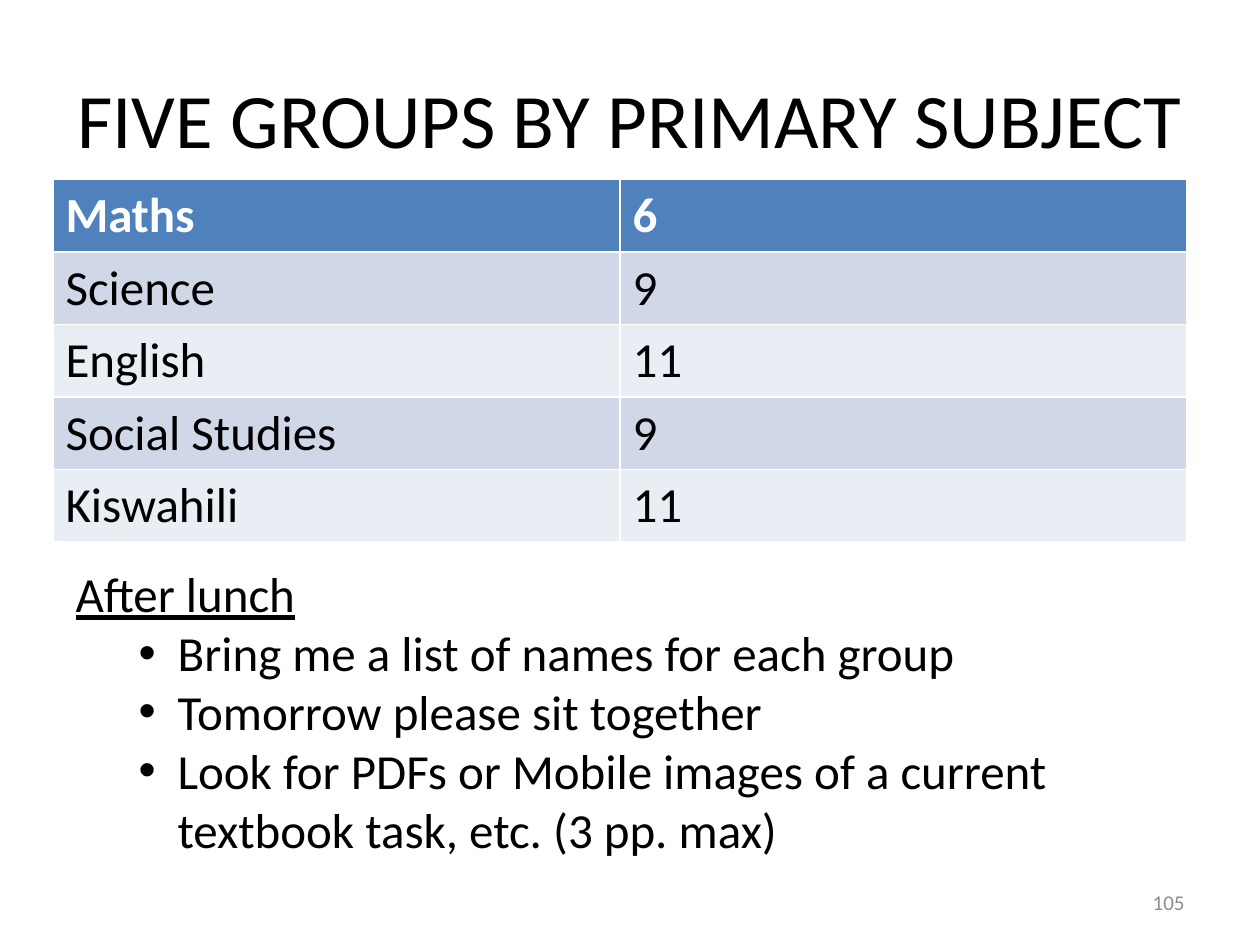
from lxml import etree
from pptx import Presentation
from pptx.dml.color import RGBColor
from pptx.enum import text
from pptx.oxml.ns import qn
from pptx.util import Inches, Pt

WIDTH, HEIGHT = Inches(10), Inches(7.5)


def colour(value):
    return RGBColor.from_string(value)


class SlideBuilder:
    font_name = "Calibri"
    black, white, grey = "000000", "FFFFFF", "8C8C8C"
    header, bands = "4F81BD", ("D0D8E8", "E9EDF4")

    def __init__(self, presentation):
        self.slide = presentation.slides.add_slide(presentation.slide_layouts[1])

    def box(self, left, top, width, height):
        """Turn shares of the slide's size into lengths."""
        return (int(left * WIDTH), int(top * HEIGHT),
                int(width * WIDTH), int(height * HEIGHT))

    def place(self, shape, *shares):
        shape.left, shape.top, shape.width, shape.height = self.box(*shares)

    def style(self, paragraph, size, value, bold=False, underline=False):
        font = paragraph.font
        font.name, font.size = self.font_name, Pt(size)
        font.bold, font.underline = bold, underline
        font.color.rgb = colour(value)

    def title(self, wording, *shares):
        shape = self.slide.shapes.title
        self.place(shape, *shares)
        shape.text_frame.text = wording
        paragraph = shape.text_frame.paragraphs[0]
        paragraph.alignment = text.PP_ALIGN.CENTER
        self.style(paragraph, 44, self.black)

    def table(self, rows, *shares):
        left, top, width, height = self.box(*shares)
        table = self.slide.shapes.add_table(
            len(rows), len(rows[0]), left, top, width, height).table
        for r, row in enumerate(rows):
            for c, wording in enumerate(row):
                cell = table.cell(r, c)
                cell.text = wording
                cell.fill.solid()
                cell.fill.fore_color.rgb = colour(
                    self.bands[(r - 1) % 2] if r else self.header)
                self.style(cell.text_frame.paragraphs[0], 28,
                           self.black if r else self.white, bold=r == 0)

    def bullet(self, paragraph, character):
        properties = paragraph._p.get_or_add_pPr()
        if not character:
            properties.set("marL", "0")
            properties.set("indent", "0")
            etree.SubElement(properties, qn("a:buNone"))
            return
        properties.set("marL", str(Inches(0.81)))
        properties.set("indent", str(Inches(-0.31)))
        etree.SubElement(properties, qn("a:buFont")).set("typeface", "Arial")
        etree.SubElement(properties, qn("a:buChar")).set("char", character)

    def body(self, heading, items, *shares):
        shape = self.slide.placeholders[1]
        self.place(shape, *shares)
        frame = shape.text_frame
        frame.auto_size = text.MSO_AUTO_SIZE.NONE
        frame.word_wrap = False
        for i, wording in enumerate([heading] + items):
            paragraph = frame.add_paragraph() if i else frame.paragraphs[0]
            paragraph.text = wording
            paragraph.level = 1 if i else 0
            paragraph.space_before = Pt(0)
            self.bullet(paragraph, "•" if i else None)
            self.style(paragraph, 28, self.black, underline=i == 0)

    def page_number(self, wording, *shares):
        frame = self.slide.shapes.add_textbox(*self.box(*shares)).text_frame
        frame.word_wrap = True
        frame.vertical_anchor = text.MSO_ANCHOR.MIDDLE
        frame.text = wording
        frame.paragraphs[0].alignment = text.PP_ALIGN.RIGHT
        self.style(frame.paragraphs[0], 12, self.grey)


def main():
    presentation = Presentation()
    presentation.slide_width, presentation.slide_height = WIDTH, HEIGHT
    builder = SlideBuilder(presentation)

    # Title
    builder.title("FIVE GROUPS BY PRIMARY SUBJECT", 0.05, 0.04, 0.9, 0.17)

    # Group sizes by subject
    builder.table([("Maths", "6"), ("Science", "9"), ("English", "11"),
                   ("Social Studies", "9"), ("Kiswahili", "11")],
                  0.042, 0.19, 0.9, 0.38)

    # Instructions
    builder.body("After lunch",
                 ["Bring me a list of names for each group",
                  "Tomorrow please sit together",
                  "Look for PDFs or Mobile images of a current \v"
                  "textbook task, etc. (3 pp. max)"],
                 0.05, 0.59, 0.81, 0.33)

    # Page number
    builder.page_number("105", 0.72, 0.93, 0.23, 0.05)

    presentation.save("out.pptx")


if __name__ == "__main__":
    main()
